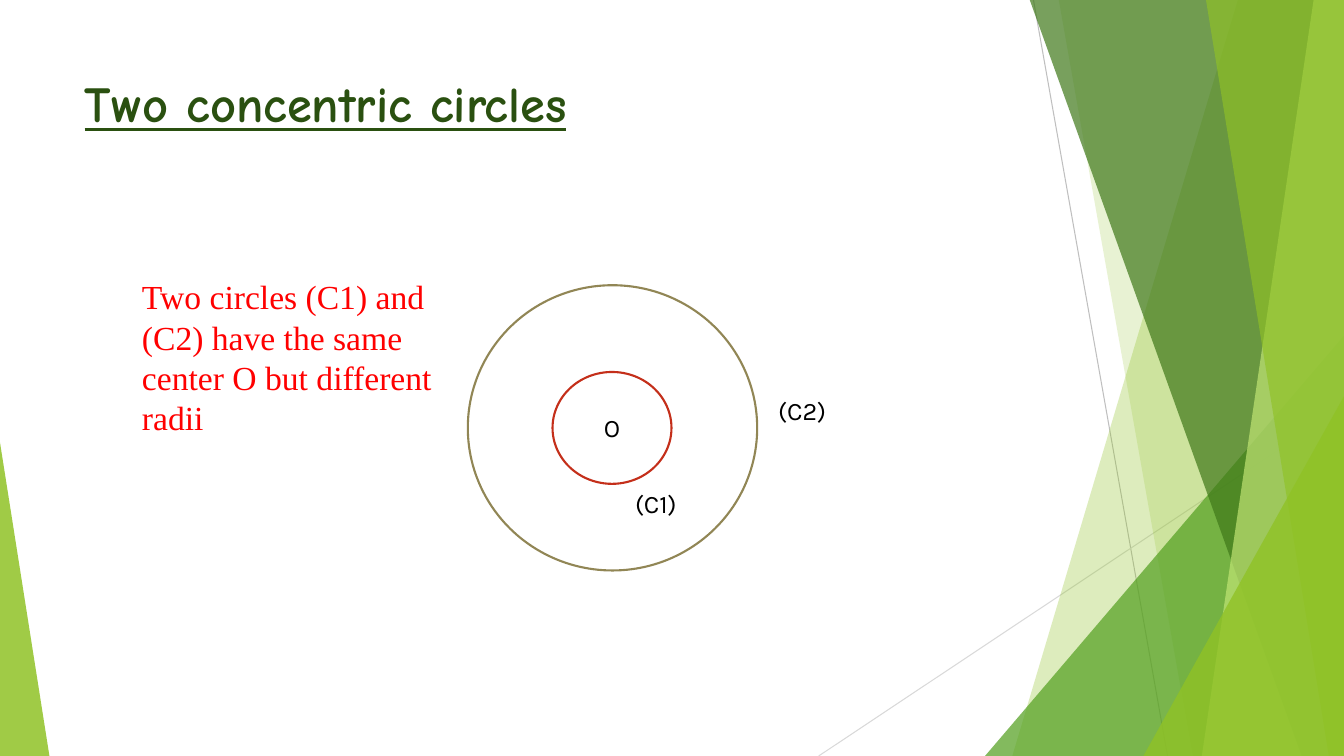
import pptx
import pptx.util
import pptx.dml.color
import pptx.enum.shapes
import pptx.enum.text
import pptx.oxml
import pptx.oxml.ns

Inches = pptx.util.Inches
RGBColor = pptx.dml.color.RGBColor
SHAPE = pptx.enum.shapes.MSO_SHAPE
ALIGN = pptx.enum.text.PP_ALIGN
ANCHOR = pptx.enum.text.MSO_ANCHOR

BLACK = RGBColor(0x00, 0x00, 0x00)
WHITE = RGBColor(0xFF, 0xFF, 0xFF)
RED = RGBColor(0xFF, 0x00, 0x00)
TITLE_GREEN = RGBColor(0x2A, 0x50, 0x10)
LIME = RGBColor(0x90, 0xC2, 0x26)
PALE_LIME = RGBColor(0xC0, 0xE4, 0x74)
GREEN = RGBColor(0x54, 0xA0, 0x21)
DARK_GREEN = RGBColor(0x3F, 0x78, 0x19)
GREY = RGBColor(0xBF, 0xBF, 0xBF)
LIGHT_GREY = RGBColor(0xD9, 0xD9, 0xD9)
OLIVE = RGBColor(0x91, 0x86, 0x55)
BRICK = RGBColor(0xC4, 0x2F, 0x1A)

RIGHT, TOP, BOTTOM = 13.33, -0.01, 7.5


def paint(sp, color, opacity):
    """Fill a shape without outline or shadow; opacity is in percent."""
    sp.shadow.inherit = False
    sp.line.fill.background()
    sp.fill.solid()
    sp.fill.fore_color.rgb = color
    clr = sp.fill._xPr.find(".//" + pptx.oxml.ns.qn("a:srgbClr"))
    clr.append(pptx.oxml.parse_xml(
        f'<a:alpha {pptx.oxml.ns.nsdecls("a")} val="{opacity * 1000}"/>'))


def write(sp, text, **font):
    tf = sp.text_frame
    tf.text = text
    p = tf.paragraphs[0]
    for name, value in font.items():
        if name == "color":
            p.runs[0].font.color.rgb = value
        else:
            setattr(p.runs[0].font, name, value)
    return p


prs = pptx.Presentation()
prs.slide_width = Inches(RIGHT)
prs.slide_height = Inches(BOTTOM)
s = prs.slides.add_slide(prs.slide_layouts[5])

# Thin lines behind the green bands
for x1, y1, x2, y2, color in [
    (10.25, 0, 11.58, BOTTOM, GREY),
    (RIGHT, 4.03, 8.12, BOTTOM, LIGHT_GREY),
]:
    line = s.shapes.add_connector(
        pptx.enum.shapes.MSO_CONNECTOR.STRAIGHT,
        Inches(x1), Inches(y1), Inches(x2), Inches(y2))
    line.line.color.rgb = color
    line.line.width = pptx.util.Pt(0.75)
    line._element.spPr.append(pptx.oxml.parse_xml(
        f'<a:effectLst {pptx.oxml.ns.nsdecls("a")}/>'))

# Bands run to the right edge: (top left x, bottom left x).
# Triangles: (left, top, width, apex position).
for outline, color, opacity in [
    ((12.28, 10.04), LIME, 30),
    ((10.5, 11.83), LIME, 20),
    ((9.77, 3.33, 3.56, 1), GREEN, 72),
    ((10.21, 12.91), DARK_GREEN, 70),
    ((13.03, 11.92), PALE_LIME, 70),
    ((11.96, 13.18), LIME, 65),
    ((11.34, 3.93, 1.99, 1), LIME, 80),
    ((0, 4.39, 0.49, 0), LIME, 85),
]:
    if len(outline) == 2:
        top_x, bottom_x = outline
        band = s.shapes.build_freeform(Inches(top_x), Inches(TOP))
        band.add_line_segments([
            (Inches(x), Inches(y)) for x, y in
            [(RIGHT, TOP), (RIGHT, BOTTOM), (bottom_x, BOTTOM)]])
        sp = band.convert_to_shape()
    else:
        left, top, width, apex = outline
        sp = s.shapes.add_shape(
            SHAPE.ISOSCELES_TRIANGLE, Inches(left), Inches(top),
            Inches(width), Inches(BOTTOM - top))
        sp.adjustments[0] = apex
    paint(sp, color, opacity)

# Title
title = s.shapes.title
title.left, title.top = Inches(0.74), Inches(0.67)
title.width, title.height = Inches(9.4), Inches(1.44)
p = write(title, "Two concentric circles", name="Comic Neue",
          size=pptx.util.Pt(36), bold=True, underline=True, color=TITLE_GREEN)
p.alignment = ALIGN.LEFT
title.text_frame.vertical_anchor = ANCHOR.TOP

# Circles, outer first
label_font = {"name": "Karla", "size": pptx.util.Pt(18), "color": BLACK}
for kind, left, top, width, height, color, text in [
    (SHAPE.FLOWCHART_CONNECTOR, 4.64, 2.83, 2.87, 2.83, OLIVE, ""),
    (SHAPE.OVAL, 5.48, 3.69, 1.18, 1.11, BRICK, "O"),
]:
    circle = s.shapes.add_shape(
        kind, Inches(left), Inches(top), Inches(width), Inches(height))
    paint(circle, WHITE, 100)
    circle.line.color.rgb = color
    circle.line.width = pptx.util.Pt(1.5)
    if text:
        write(circle, text, **label_font).alignment = ALIGN.CENTER
        circle.text_frame.vertical_anchor = ANCHOR.MIDDLE

# Labels and definition
definition = "Two circles (C1) and (C2) have the same center O but different radii"
definition_font = {"name": "Times New Roman", "size": pptx.util.Pt(24), "color": RED}
for text, left, top, width, height, font in [
    ("(C1)", 6.2, 4.8, 0.68, 0.4, label_font),
    ("(C2)", 7.62, 3.87, 0.74, 0.4, label_font),
    (definition, 1.31, 2.69, 3.12, 1.72, definition_font),
]:
    box = s.shapes.add_textbox(
        Inches(left), Inches(top), Inches(width), Inches(height))
    box.text_frame.word_wrap = True
    write(box, text, **font)

prs.save("out.pptx")
